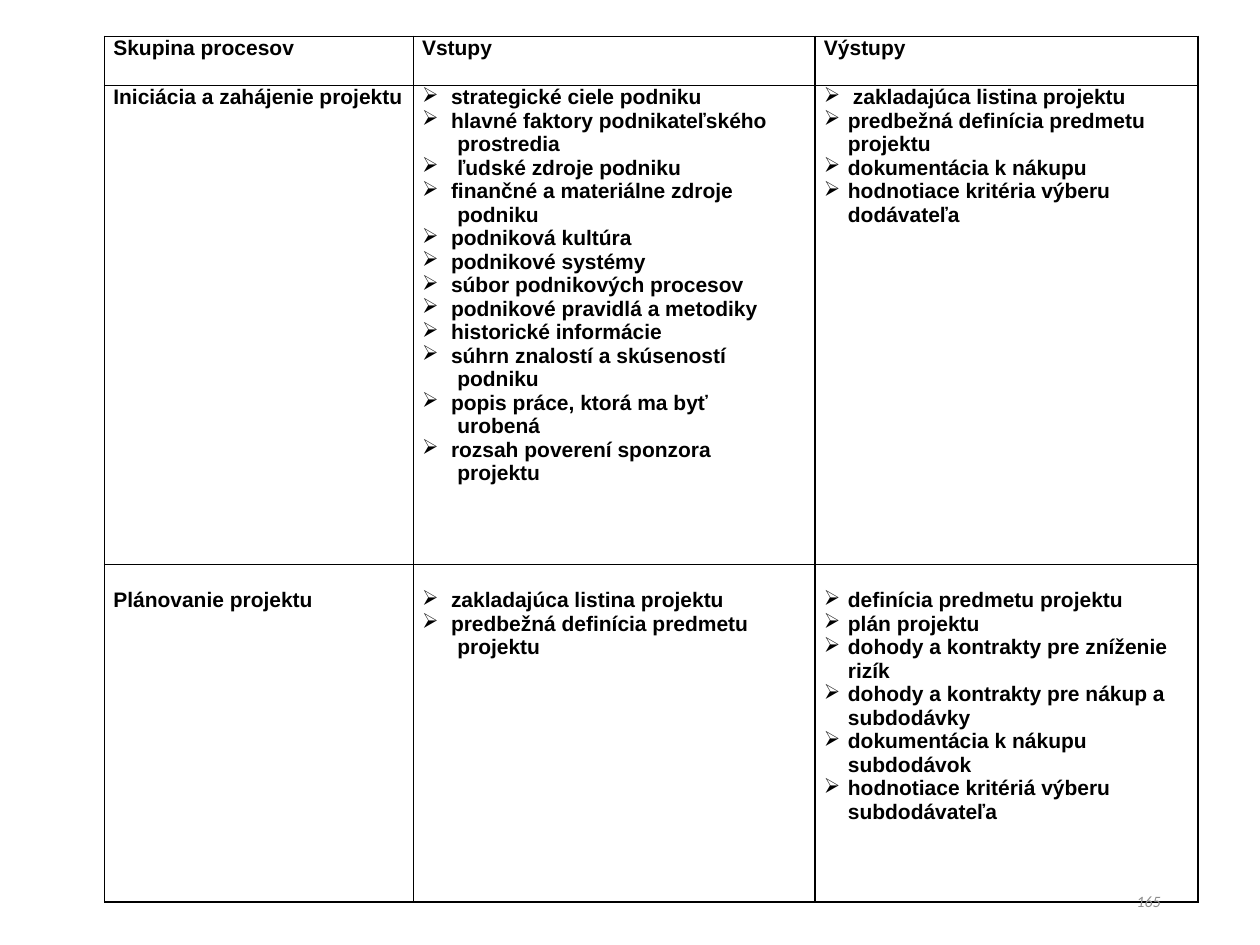
from lxml import etree
from pptx import Presentation
from pptx.dml.color import RGBColor
from pptx.enum import text
from pptx.oxml import ns
from pptx.util import Inches, Pt

COLORS = {"ink": "000000", "number": "8C8C8C"}
FORMATS = {
    "table": {"name": "Arial", "size": Pt(12), "bold": True},
    "number": {"name": "Calibri", "size": Pt(9), "italic": True},
}
# Paragraph styles: left margin in inches, bullet shown
STYLES = {
    "plain": (0, False),
    "close": (0.19, True),
    "item": (0.23, True),
    "wide": (0.28, True),
    "rest": (0.28, False),
}

# Each cell is a list of (style, lines) groups
ROWS = [
    [[("plain", ["Skupina procesov"])], [("plain", ["Vstupy"])], [("plain", ["Výstupy"])]],
    [
        [("plain", ["Iniciácia a zahájenie projektu"])],
        [
            ("item", ["strategické ciele podniku", "hlavné faktory podnikateľského"]),
            ("rest", ["prostredia"]),
            ("wide", ["ľudské zdroje podniku"]),
            ("item", ["finančné a materiálne zdroje"]),
            ("rest", ["podniku"]),
            ("item", ["podniková kultúra", "podnikové systémy", "súbor podnikových procesov",
                      "podnikové pravidlá a metodiky", "historické informácie",
                      "súhrn znalostí a skúseností"]),
            ("rest", ["podniku"]),
            ("item", ["popis práce, ktorá ma byť"]),
            ("rest", ["urobená"]),
            ("item", ["rozsah poverení sponzora"]),
            ("rest", ["projektu"]),
        ],
        [
            ("item", ["zakladajúca listina projektu"]),
            ("close", ["predbežná definícia predmetu projektu", "dokumentácia k nákupu",
                       "hodnotiace kritéria výberu dodávateľa"]),
        ],
    ],
    [
        [("plain", ["Plánovanie projektu"])],
        [
            ("item", ["zakladajúca listina projektu", "predbežná definícia predmetu"]),
            ("rest", ["projektu"]),
        ],
        [("close", ["definícia predmetu projektu", "plán projektu",
                    "dohody a kontrakty pre zníženie rizík",
                    "dohody a kontrakty pre nákup a subdodávky",
                    "dokumentácia k nákupu subdodávok",
                    "hodnotiace kritériá výberu subdodávateľa"])],
    ],
]


def add_run(paragraph, words, kind, color):
    run = paragraph.add_run()
    run.text = words
    for name, value in FORMATS[kind].items():
        setattr(run.font, name, value)
    run.font.color.rgb = RGBColor.from_string(COLORS[color])


def add_borders(cell):
    properties = cell._tc.get_or_add_tcPr()
    for side in ("a:lnL", "a:lnR", "a:lnT", "a:lnB"):
        line = etree.SubElement(properties, ns.qn(side), w=str(Pt(1)))
        fill = etree.SubElement(line, ns.qn("a:solidFill"))
        etree.SubElement(fill, ns.qn("a:srgbClr"), val=COLORS["ink"])


presentation = Presentation()
presentation.slide_width, presentation.slide_height = Inches(10), Inches(7.5)
slide = presentation.slides.add_slide(presentation.slide_layouts[6])
width_share = presentation.slide_width / 100
height_share = presentation.slide_height / 100

# Table grid, in percent of the slide
column_shares = [24.5, 31.9, 30.4]
row_shares = [5.2, 50.7, 35.7]
table = slide.shapes.add_table(
    len(row_shares), len(column_shares),
    int(8.3 * width_share), int(3.85 * height_share),
    int(sum(column_shares) * width_share), int(sum(row_shares) * height_share),
).table
table.first_row = table.horz_banding = False
for column, share in zip(table.columns, column_shares):
    column.width = int(share * width_share)
for row, share in zip(table.rows, row_shares):
    row.height = int(share * height_share)

# Cells: borders, margins and text
for row_index, row in enumerate(ROWS):
    for column_index, groups in enumerate(row):
        cell = table.cell(row_index, column_index)
        add_borders(cell)
        cell.fill.background()
        cell.margin_left = cell.margin_right = Inches(0.07)
        cell.margin_top = Inches(0.19 if row_index == 2 else 0)
        cell.margin_bottom = 0
        lines = [(style, line) for style, group in groups for line in group]
        for index, (style, line) in enumerate(lines):
            frame = cell.text_frame
            paragraph = frame.paragraphs[0] if index == 0 else frame.add_paragraph()
            margin, bullet = STYLES[style]
            properties = paragraph._p.get_or_add_pPr()
            properties.set("marL", str(Inches(margin)))
            properties.set("indent", str(-Inches(margin) if bullet else 0))
            if bullet:
                etree.SubElement(properties, ns.qn("a:buChar"), char="➢")
            add_run(paragraph, line, "table", "ink")

# Slide number
number_box = slide.shapes.add_textbox(
    int(70.6 * width_share), int(92.7 * height_share),
    int(22.5 * width_share), int(5.3 * height_share))
number_box.text_frame.word_wrap = True
number_box.text_frame.vertical_anchor = text.MSO_ANCHOR.MIDDLE
number_paragraph = number_box.text_frame.paragraphs[0]
number_paragraph.alignment = text.PP_ALIGN.RIGHT
add_run(number_paragraph, "165", "number", "number")

presentation.save("out.pptx")
